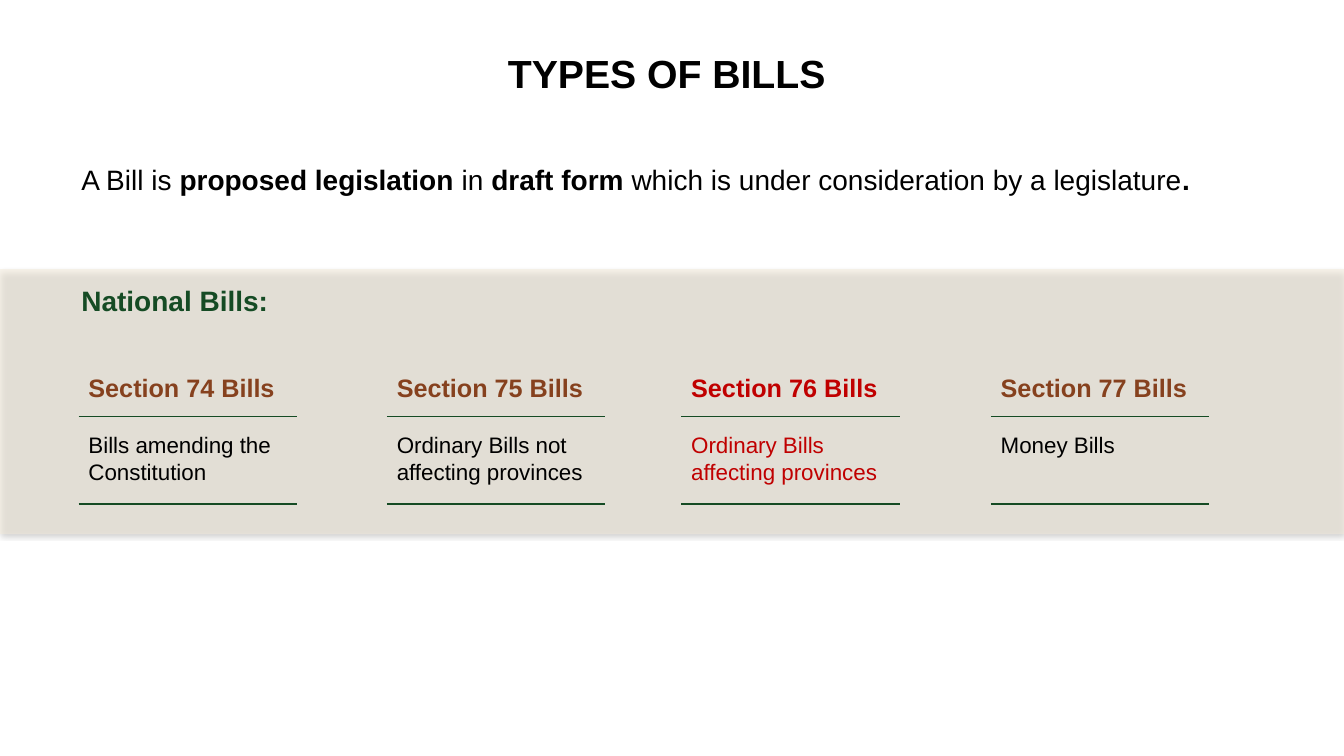
from lxml import etree
from pptx import Presentation
from pptx.dml.color import RGBColor
from pptx.enum.shapes import MSO_CONNECTOR as Connector, MSO_SHAPE as Shape
from pptx.enum.text import MSO_ANCHOR as Anchor, MSO_AUTO_SIZE as AutoSize, PP_ALIGN as Align
from pptx.oxml.ns import qn
from pptx.util import Cm, Pt

COLORS = {
    "black": "000000",
    "band": "F3EAD9",
    "green": "154B24",
    "brown": "86411E",
    "red": "C00000",
}

DEFINITION = [
    ("A Bill is ", False),
    ("proposed legislation ", True),
    ("in ", False),
    ("draft form", True),
    (" which is under consideration by a legislature", False),
    (".", True),
]

BILLS = [
    (1.98, "Section 74 Bills", "Bills amending the Constitution", "brown", "black"),
    (9.75, "Section 75 Bills", "Ordinary Bills not affecting provinces", "brown", "black"),
    (17.17, "Section 76 Bills", "Ordinary Bills affecting provinces", "red", "red"),
    (24.97, "Section 77 Bills", "Money Bills", "brown", "black"),
]
COLUMN_WIDTH = 5.5
RULE_TOPS = (10.49, 12.7)


def add_text(paragraph, text, size=20, color="black", bold=False, font="Arial"):
    run = paragraph.add_run()
    run.text = text
    run.font.name = font
    run.font.size = Pt(size)
    run.font.bold = bold
    run.font.color.rgb = RGBColor.from_string(COLORS[color])


class SlideBuilder:
    def __init__(self, presentation):
        self.slide = presentation.slides.add_slide(presentation.slide_layouts[5])
        self.shapes = self.slide.shapes

    def title(self, text, left, top, width, height):
        title = self.shapes.title
        title.left, title.top, title.width, title.height = map(Cm, (left, top, width, height))
        frame = title.text_frame
        frame.auto_size = AutoSize.NONE
        frame.vertical_anchor = Anchor.MIDDLE
        paragraph = frame.paragraphs[0]
        paragraph.alignment = Align.CENTER
        add_text(paragraph, text, size=28, bold=True)

    def band(self, top, width, height):
        band = self.shapes.add_shape(Shape.RECTANGLE, 0, Cm(top), width, Cm(height))
        band.line.fill.background()
        band.fill.solid()
        band.fill.fore_color.rgb = RGBColor.from_string(COLORS["band"])
        band.shadow.inherit = False
        properties = band._element.spPr
        fill_color = properties.find(qn("a:solidFill"))[0]
        etree.SubElement(fill_color, qn("a:alpha"), val="51000")
        shadow = etree.SubElement(
            properties.find(qn("a:effectLst")), qn("a:outerShdw"),
            blurRad="40000", dist="23000", dir="5400000", rotWithShape="0")
        shadow_color = etree.SubElement(shadow, qn("a:srgbClr"), val=COLORS["black"])
        etree.SubElement(shadow_color, qn("a:alpha"), val="35000")

    def text_box(self, left, top, width, height, wrap=True):
        box = self.shapes.add_textbox(Cm(left), Cm(top), Cm(width), Cm(height))
        box.text_frame.word_wrap = wrap
        box.text_frame.auto_size = AutoSize.SHAPE_TO_FIT_TEXT
        return box.text_frame

    def rule(self, left, top, width):
        line = self.shapes.add_connector(
            Connector.STRAIGHT, Cm(left), Cm(top), Cm(left + width), Cm(top))
        line.line.width = Pt(0.75)
        line.line.color.rgb = RGBColor.from_string(COLORS["green"])
        etree.SubElement(line._element.spPr, qn("a:effectLst"))

    def bill(self, left, heading, description, heading_color, description_color):
        frame = self.text_box(left, 9.25, COLUMN_WIDTH, 3.18)
        add_text(frame.paragraphs[0], heading, size=18, color=heading_color, bold=True)
        paragraph = frame.add_paragraph()
        paragraph.space_before = Pt(20.7)
        add_text(paragraph, description, size=16, color=description_color)
        for top in RULE_TOPS:
            self.rule(left, top, COLUMN_WIDTH)


def main():
    presentation = Presentation()
    presentation.slide_width = Cm(33.87)
    presentation.slide_height = Cm(19.05)
    builder = SlideBuilder(presentation)

    builder.band(6.78, presentation.slide_width, 6.68)
    builder.title("TYPES OF BILLS ", 5.51, 0.76, 22.86, 2.13)

    definition = builder.text_box(1.8, 3.96, 30.35, 1.12).paragraphs[0]
    for text, bold in DEFINITION:
        add_text(definition, text, bold=bold)

    heading = builder.text_box(1.8, 7.01, 5.26, 1.12, wrap=False).paragraphs[0]
    add_text(heading, "National Bills:", color="green", bold=True)

    for bill in BILLS:
        builder.bill(*bill)

    presentation.save("out.pptx")


if __name__ == "__main__":
    main()
